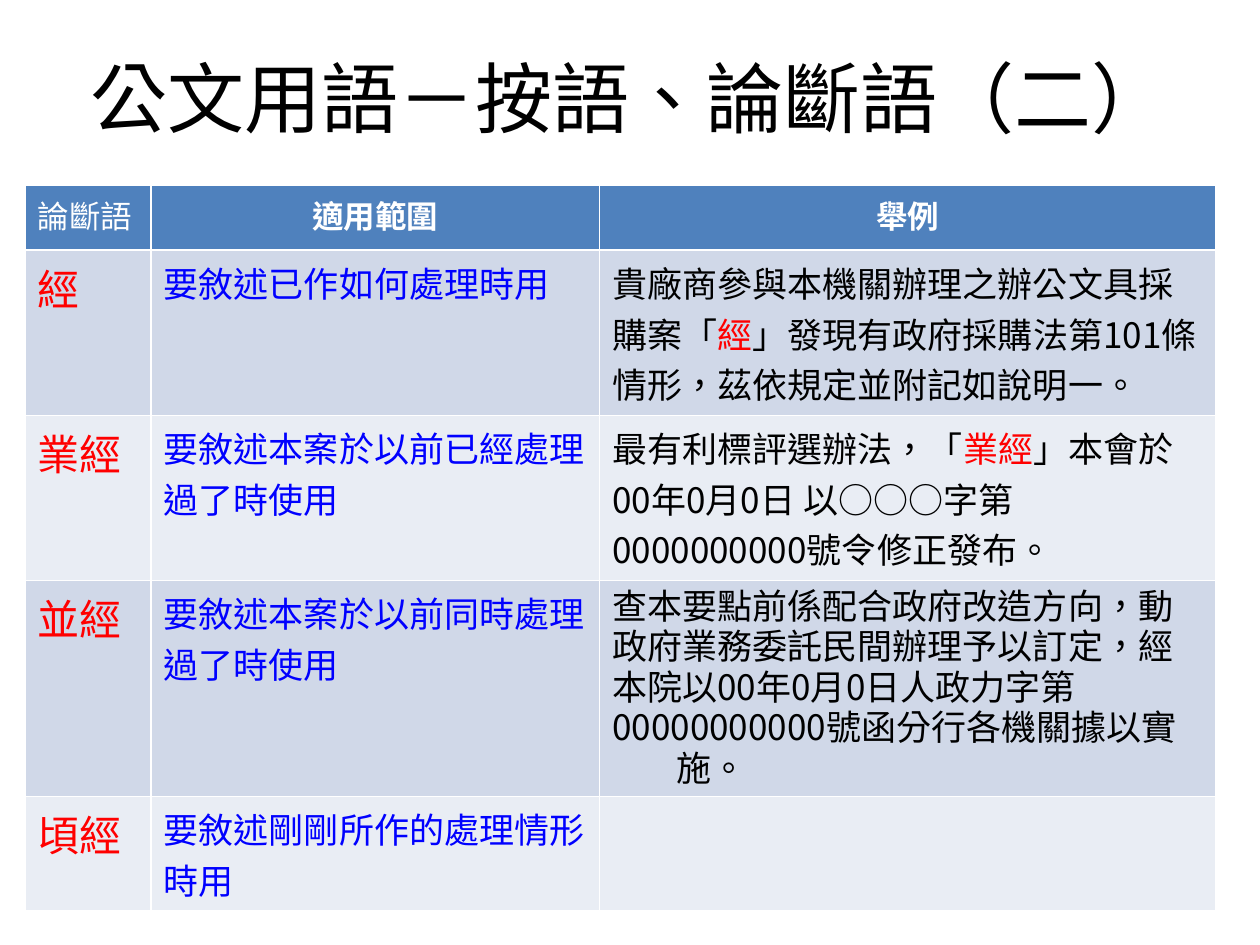
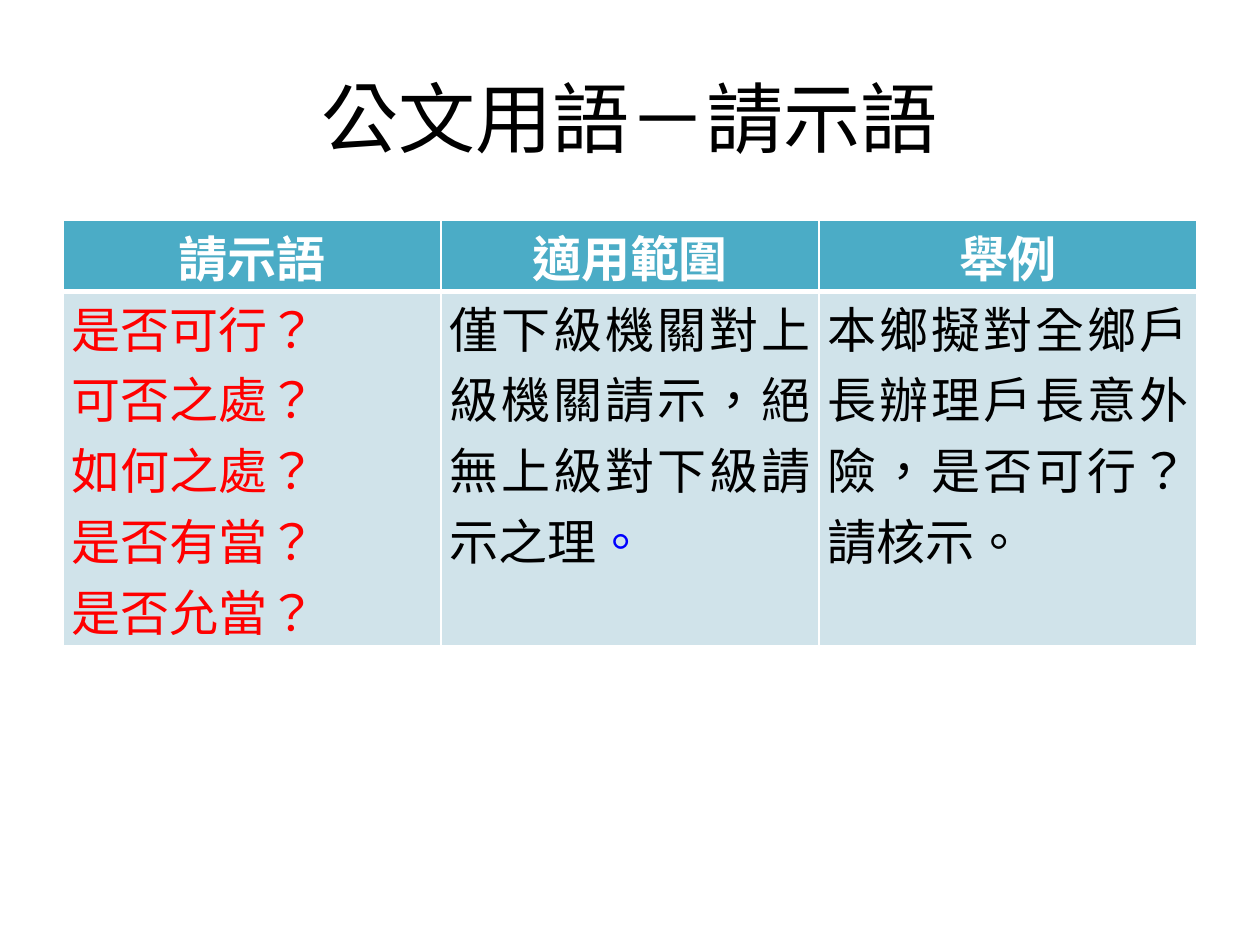
from dataclasses import dataclass

from lxml.etree import SubElement
from pptx import Presentation
from pptx.dml.color import RGBColor
from pptx.enum.lang import MSO_LANGUAGE_ID
from pptx.enum.text import MSO_ANCHOR, MSO_AUTO_SIZE, PP_ALIGN
from pptx.oxml import parse_xml
from pptx.oxml.ns import nsdecls, qn
from pptx.util import Pt


# Colours, fonts and type sizes
@dataclass(frozen=True)
class Theme:
    black: str = "000000"
    white: str = "FFFFFF"
    red: str = "FF0000"
    blue: str = "0000FF"
    header_blue: str = "4F81BD"
    bands_blue: tuple = ("D0D8E8", "E9EDF4")
    header_teal: str = "4BACC6"
    bands_teal: tuple = ("D0E3EA",)
    font: str = "Noto Sans CJK SC"
    header_font: str = "Calibri"
    title_size: int = 44
    large: int = 28
    term: int = 24
    body: int = 20
    header: int = 18


THEME = Theme()
SIDE, MARGIN = 36, 14.4


def red(words):
    return words, {"color": THEME.red}


# Text: each paragraph is a string or a list of strings and (string, format) pairs
def write(frame, paragraphs, align=PP_ALIGN.LEFT, hanging=0, spacing=None, **style):
    frame.word_wrap = True
    for index, content in enumerate(paragraphs):
        para = frame.add_paragraph() if index else frame.paragraphs[0]
        para.alignment = align
        if spacing:
            para.line_spacing = spacing
        if hanging:
            properties = para._p.get_or_add_pPr()
            properties.set("marL", str(Pt(hanging)))
            properties.set("indent", str(-Pt(hanging)))
        for part in [content] if isinstance(content, str) else content:
            words, changes = (part, {}) if isinstance(part, str) else part
            add_span(para, words, **{**style, **changes})


def add_span(para, words, size=THEME.body, color=THEME.black, bold=False, font=THEME.font):
    span = para.add_run()
    span.text = words
    span.font.size = Pt(size)
    span.font.bold = bold
    span.font.color.rgb = RGBColor.from_string(color)
    span.font.name = font
    span.font.language_id = MSO_LANGUAGE_ID.TRADITIONAL_CHINESE
    SubElement(span._r.get_or_add_rPr(), qn("a:ea")).set("typeface", THEME.font)


# Page with a title
def add_page(deck, title, title_height):
    page = deck.slides.add_slide(deck.slide_layouts[5])
    box = page.shapes.title
    box.left, box.top, box.width, box.height = Pt(SIDE), Pt(21.6), Pt(648), Pt(title_height)
    frame = box.text_frame
    frame.auto_size = MSO_AUTO_SIZE.NONE
    frame.vertical_anchor = MSO_ANCHOR.MIDDLE
    write(frame, [title], align=PP_ALIGN.CENTER, size=THEME.title_size)
    return page


# Tables
def add_grid(page, left, top, widths, heights):
    table = page.shapes.add_table(len(heights), len(widths), Pt(left), Pt(top),
                                  Pt(sum(widths)), Pt(sum(heights))).table
    table.first_row = table.horz_banding = False
    for column, width in zip(table.columns, widths):
        column.width = Pt(width)
    for row, height in zip(table.rows, heights):
        row.height = Pt(height)
    return table


def set_borders(cell, **widths):
    properties = cell._tc.get_or_add_tcPr()
    for index, side in enumerate("LRTB"):
        properties.insert(index, parse_xml(
            f'<a:ln{side} {nsdecls("a")} w="{Pt(widths.get(side, 1))}"><a:solidFill>'
            f'<a:srgbClr val="{THEME.white}"/></a:solidFill></a:ln{side}>'))


def paint_table(table, header, bands, seam):
    """Fill header and banded rows; seam is the line width below the header."""
    for number, row in enumerate(table.rows):
        color = bands[(number - 1) % len(bands)] if number else header
        for cell in row.cells:
            cell.fill.solid()
            cell.fill.fore_color.rgb = RGBColor.from_string(color)
            set_borders(cell, **({"B": seam} if number == 0 else
                                 {"T": seam} if number == 1 else {}))


def write_header(cell, words, size):
    write(cell.text_frame, [words], align=PP_ALIGN.CENTER, size=size,
          color=THEME.white, bold=True, font=THEME.header_font)


# Content: term, scope, example paragraphs, example format
JUDGEMENT_ROWS = [
    ("經", "要敘述已作如何處理時用",
     [["貴廠商參與本機關辦理之辦公文具採購案「", red("經"),
       "」發現有政府採購法第101條情形，茲依規定並附記如說明一。"]], {}),
    ("業經", "要敘述本案於以前已經處理過了時使用",
     [["最有利標評選辦法，「", red("業經"), "」本會於00年0月0日 以",
       ("○○○", {"font": THEME.header_font}), "字第0000000000號令修正發布。"]], {}),
    ("並經", "要敘述本案於以前同時處理過了時使用",
     ["查本要點前係配合政府改造方向，動",
      "政府業務委託民間辦理予以訂定，經",
      "本院以00年0月0日人政力字第",
      "00000000000號函分行各機關據以實施。"], {"hanging": 36.72, "spacing": 0.8}),
    ("頃經", "要敘述剛剛所作的處理情形時用", [], {}),
]
REQUEST_COLUMNS = [
    ("請示語", ["是否可行？", "可否之處？", "如何之處？", "是否有當？", "是否允當？"], THEME.red),
    ("適用範圍", [["僅下級機關對上級機關請示，絕無上級對下級請示之理",
                   ("。", {"color": THEME.blue})]], THEME.black),
    ("舉例", ["本鄉擬對全鄉戶長辦理戶長意外險，是否可行？請核示。"], THEME.black),
]


def add_judgement_page(deck):
    page = add_page(deck, "公文用語－按語、論斷語（二）", 67)
    table = add_grid(page, MARGIN, 106, [72, 256.3, 352.1], [37, 94, 94, 123.5, 65])
    paint_table(table, THEME.header_blue, THEME.bands_blue, seam=1)
    write(table.cell(0, 0).text_frame, ["論斷語"], size=THEME.header, color=THEME.white)
    for column, words in enumerate(["適用範圍", "舉例"], start=1):
        write_header(table.cell(0, column), words, THEME.header)
    for row, (term, scope, example, layout) in enumerate(JUDGEMENT_ROWS, start=1):
        write(table.cell(row, 0).text_frame, [term], size=THEME.term, color=THEME.red)
        write(table.cell(row, 1).text_frame, [scope], color=THEME.blue)
        write(table.cell(row, 2).text_frame, example, **layout)


def add_request_page(deck):
    page = add_page(deck, "公文用語－請示語", 90)
    table = add_grid(page, SIDE, 126, [216] * 3, [40, 202])
    paint_table(table, THEME.header_teal, THEME.bands_teal, seam=3)
    for cell in table.iter_cells():
        cell.margin_left = cell.margin_right = Pt(5)
        cell.margin_top = cell.margin_bottom = 0
    for column, (heading, body, color) in enumerate(REQUEST_COLUMNS):
        top_cell = table.cell(0, column)
        top_cell.vertical_anchor = MSO_ANCHOR.MIDDLE
        write_header(top_cell, heading, THEME.large)
        write(table.cell(1, column).text_frame, body, align=PP_ALIGN.JUSTIFY,
              size=THEME.large, color=color)


def main():
    deck = Presentation()
    deck.slide_width, deck.slide_height = Pt(720), Pt(540)
    add_judgement_page(deck)
    add_request_page(deck)
    deck.save("out.pptx")


if __name__ == "__main__":
    main()
